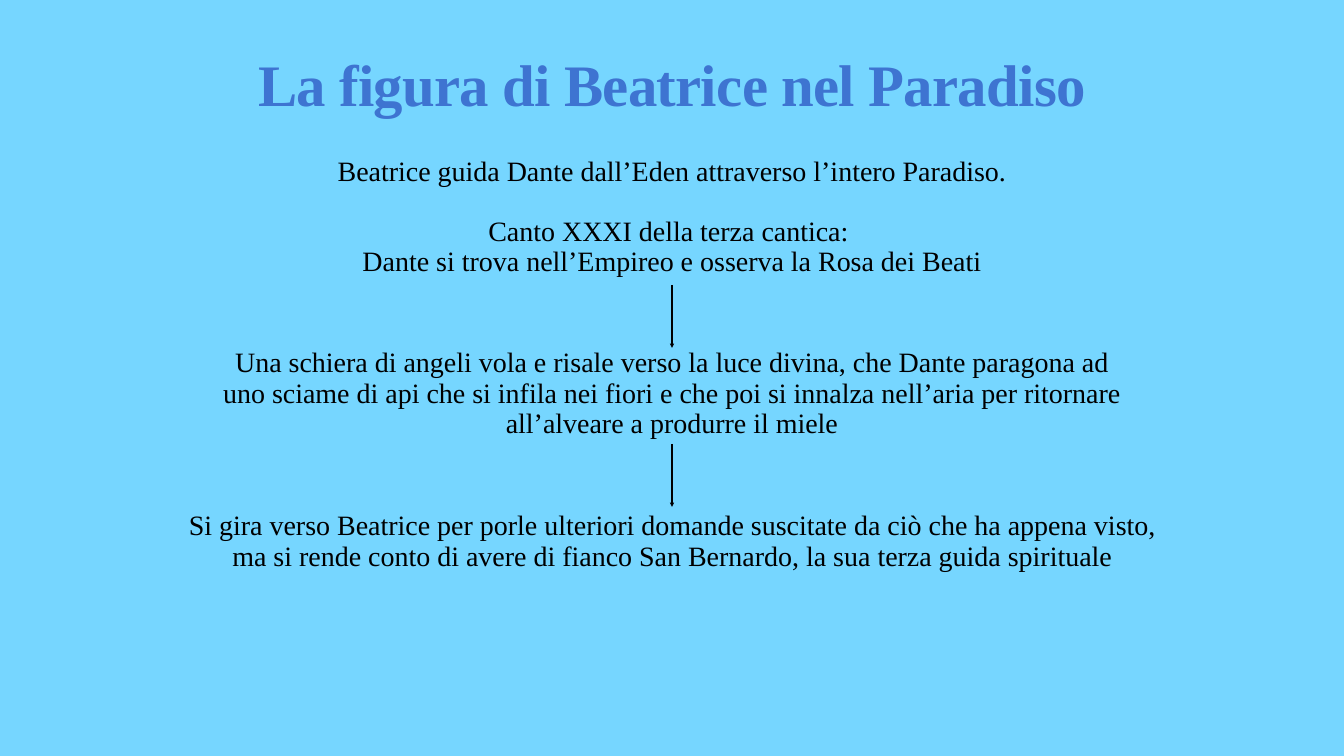
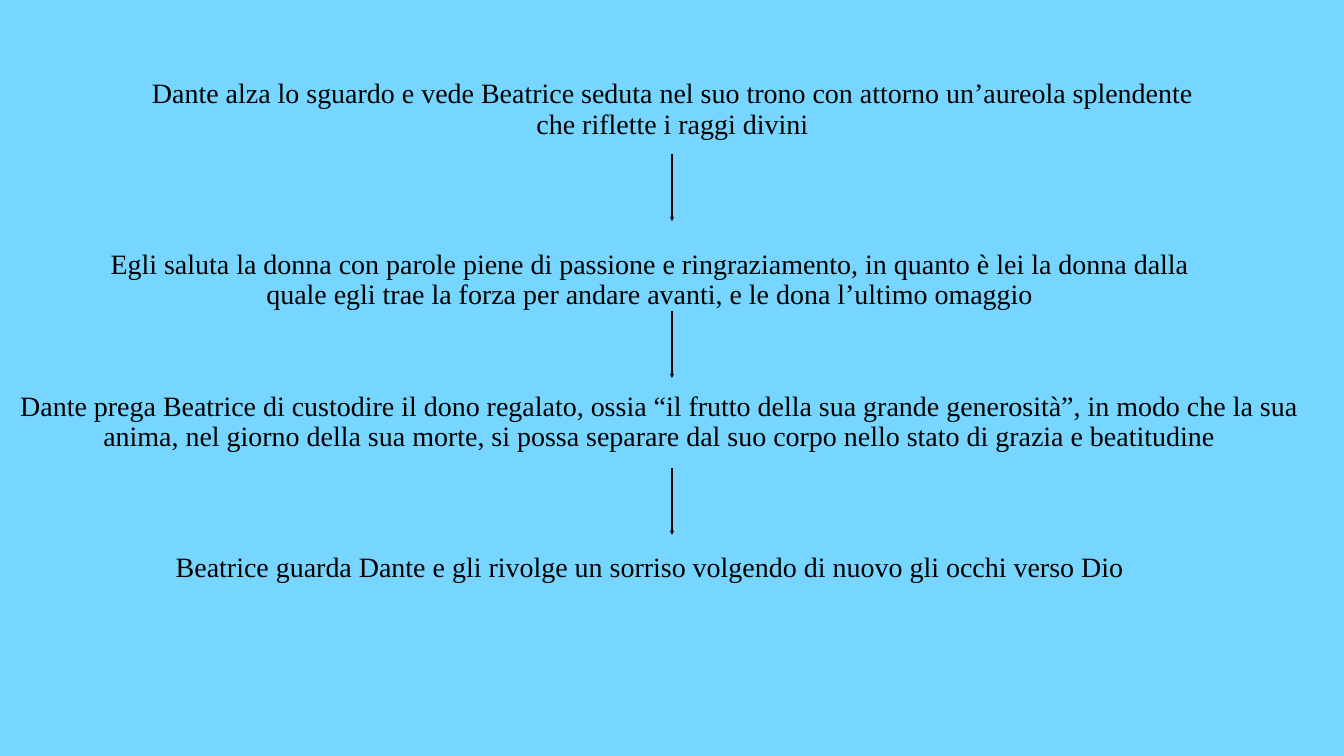
"""Build two slides on Beatrice in Dante's Paradiso."""
from lxml.etree import SubElement
from pptx import Presentation
from pptx.dml.color import RGBColor
from pptx.enum.shapes import MSO_CONNECTOR
from pptx.enum.text import MSO_ANCHOR, PP_ALIGN
from pptx.oxml.ns import qn
from pptx.util import Pt

SKY, BLUE, BLACK = "76D6FF", "3E74D1", "000000"
FONT = "Times New Roman"
WIDTH, HEIGHT = 1920, 1080
INSET = 4


def color(hex_code):
    return RGBColor.from_string(hex_code)


def add_text(slide, text, left, top, width, height, size=40, ink=BLACK, bold=False,
             leading=0.9, anchor=MSO_ANCHOR.MIDDLE, wrap=True, tracking=0, gaps=()):
    frame = slide.shapes.add_textbox(Pt(left), Pt(top), Pt(width), Pt(height)).text_frame
    frame.word_wrap = wrap
    frame.vertical_anchor = anchor
    frame.margin_left = frame.margin_right = frame.margin_top = frame.margin_bottom = Pt(INSET)
    frame.text = text
    for index, paragraph in enumerate(frame.paragraphs):
        paragraph.alignment = PP_ALIGN.CENTER
        paragraph.line_spacing = leading
        if index < len(gaps):
            paragraph.space_before = Pt(gaps[index])
        for run in paragraph.runs:
            run.font.name = FONT
            run.font.size = Pt(size)
            run.font.bold = bold
            run.font.color.rgb = color(ink)
            if tracking:
                run.font._element.set("spc", str(tracking * 100))


rose_steps = [
    ("Beatrice guida Dante dall’Eden attraverso l’intero Paradiso.\n"
     "Canto XXXI della terza cantica: \n"
     "Dante si trova nell’Empireo e osserva la Rosa dei Beati",
     (477, 220, 966, 181), {"wrap": False, "gaps": (0, 43)}),
    ("Una schiera di angeli vola e risale verso la luce divina, che Dante paragona ad "
     "uno sciame di api che si infila nei fiori e che poi si innalza nell’aria per ritornare "
     "all’alveare a produrre il miele",
     (306, 494, 1308, 138), {}),
    ("Si gira verso Beatrice per porle ulteriori domande suscitate da ciò che ha appena visto, "
     "ma si rende conto di avere di fianco San Bernardo, la sua terza guida spirituale",
     (239, 726, 1443, 96), {}),
]
farewell_steps = [
    ("Dante alza lo sguardo e vede Beatrice seduta nel suo trono con attorno un’aureola "
     "splendente che riflette i raggi divini",
     (197, 109, 1527, 96), {}),
    ("Egli saluta la donna con parole piene di passione e ringraziamento, in quanto è lei la "
     "donna dalla quale egli trae la forza per andare avanti, e le dona l’ultimo omaggio",
     (146, 353, 1564, 96), {}),
    ("Dante prega Beatrice di custodire il dono regalato, ossia “il frutto della sua grande "
     "generosità”, in modo che la sua anima, nel giorno della sua morte, si possa separare dal "
     "suo corpo nello stato di grazia e beatitudine",
     (0, 556, 1883, 96), {}),
    ("Beatrice guarda Dante e gli rivolge un sorriso volgendo di nuovo gli occhi verso Dio",
     (246, 786, 1364, 53), {"wrap": False}),
]
scenes = [
    ("La figura di Beatrice nel Paradiso", rose_steps, 407, 227, 90),
    (None, farewell_steps, 220, 224, 96),
]

deck = Presentation()
deck.slide_width, deck.slide_height = Pt(WIDTH), Pt(HEIGHT)

for title, steps, first_arrow, arrow_pitch, arrow_length in scenes:
    slide = deck.slides.add_slide(deck.slide_layouts[6])
    slide.background.fill.solid()
    slide.background.fill.fore_color.rgb = color(SKY)
    if title:
        add_text(slide, title, 96, 83.5, WIDTH - 2 * 96, 136, size=84, ink=BLUE, bold=True,
                 leading=0.8, anchor=MSO_ANCHOR.TOP, tracking=-1)
    for text, place, options in steps:
        add_text(slide, text, *place, **options)
    for index in range(len(steps) - 1):
        start = first_arrow + index * arrow_pitch
        arrow = slide.shapes.add_connector(MSO_CONNECTOR.STRAIGHT, Pt(WIDTH / 2), Pt(start),
                                           Pt(WIDTH / 2), Pt(start + arrow_length))
        arrow.line.width = Pt(2)
        arrow.line.color.rgb = color(BLACK)
        SubElement(arrow.line._get_or_add_ln(), qn("a:tailEnd"), type="triangle")
        SubElement(arrow._element.spPr, qn("a:effectLst"))

deck.save("out.pptx")
